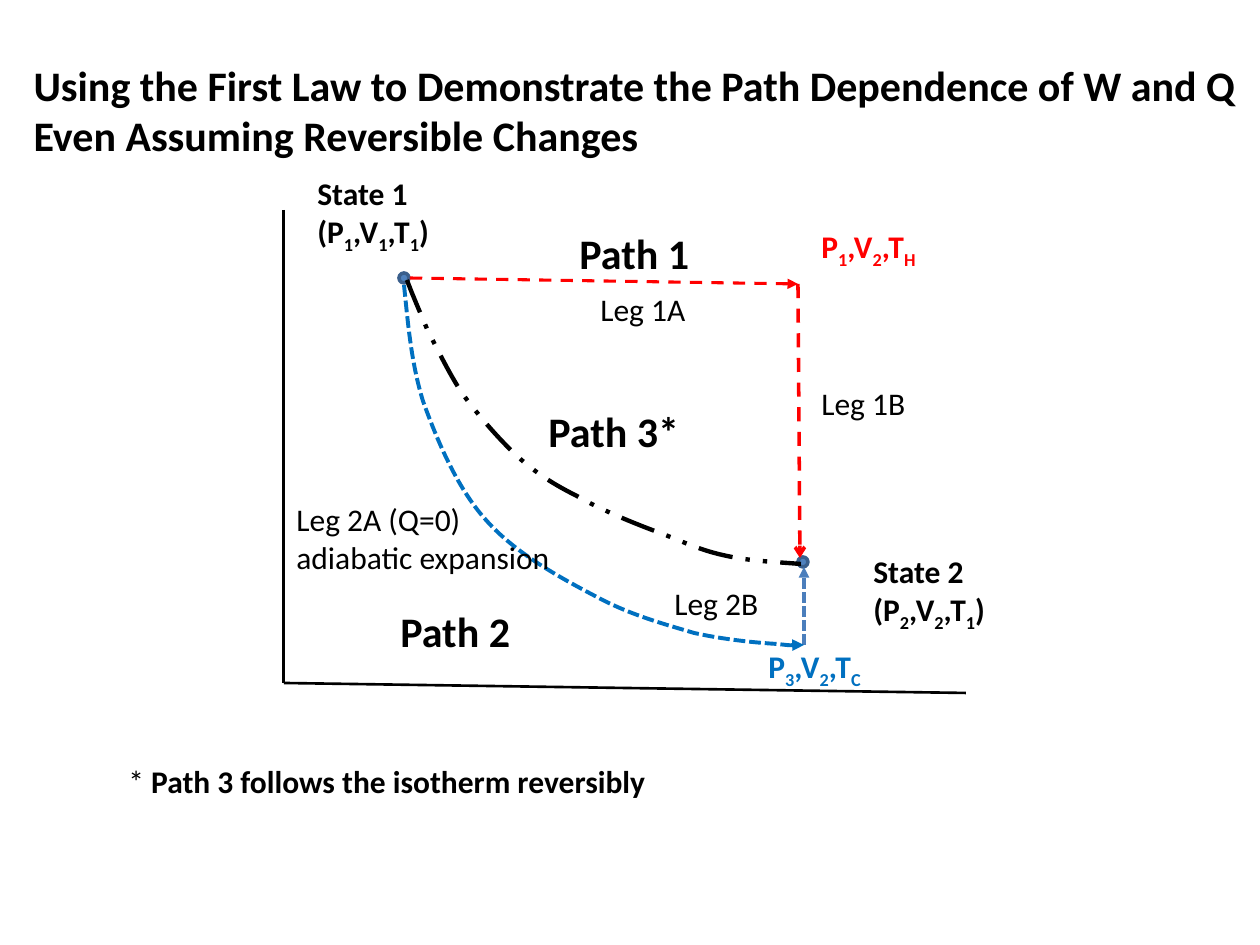
from lxml import etree
from pptx import Presentation
from pptx.dml.color import RGBColor
from pptx.enum.dml import MSO_LINE
from pptx.enum.shapes import MSO_CONNECTOR, MSO_SHAPE
from pptx.enum.text import MSO_ANCHOR, MSO_AUTO_SIZE, PP_ALIGN
from pptx.oxml.ns import qn
from pptx.util import Pt

PX = 914400 // 126  # EMU in one px
STRAIGHT, OVAL = MSO_CONNECTOR.STRAIGHT, MSO_SHAPE.OVAL
DASH, SHORT_DASH = MSO_LINE.DASH, MSO_LINE.SQUARE_DOT
DASH_DOT_DOT = MSO_LINE.DASH_DOT_DOT
TOP, LEFT, FIXED = MSO_ANCHOR.TOP, PP_ALIGN.LEFT, MSO_AUTO_SIZE.NONE

THEME = {
    "font": "Calibri", "heading": 24, "label": 18,
    "ink": "000000", "hot": "FF0000", "cold": "0070C0",
    "leg_2b": "4B7EBC", "state": "4F81BD", "state_edge": "3A5F8C",
}


def write(paragraph, text, size="label", bold=False, colour="ink"):
    """Add runs to a paragraph; the character after each "_" is a subscript."""
    first, *rest = text.split("_")
    pieces = [(first, False)]
    for piece in rest:
        pieces += [(piece[0], True), (piece[1:], False)]
    for words, subscript in pieces:
        if not words:
            continue
        run = paragraph.add_run()
        run.text = words
        formats = {"name": THEME["font"], "size": Pt(THEME[size]), "bold": bold}
        for key, value in formats.items():
            setattr(run.font, key, value)
        run.font.color.rgb = RGBColor.from_string(THEME[colour])
        if subscript:
            run.font._element.set("baseline", "-25000")


def stroke(item, colour, width, dash=None, arrow=None):
    """Format a line, give it an optional end arrow and no shadow."""
    item.line.color.rgb = RGBColor.from_string(THEME[colour])
    item.line.width = Pt(width)
    if dash:
        item.line.dash_style = dash
    properties = item._element.spPr
    if arrow:
        etree.SubElement(properties.find(qn("a:ln")), qn("a:tailEnd"), type=arrow)
    etree.SubElement(properties, qn("a:effectLst"))


prs = Presentation()
prs.slide_width, prs.slide_height = 1260 * PX, 945 * PX
slide = prs.slides.add_slide(prs.slide_layouts[5])
shapes = slide.shapes

# Title
title = shapes.title
place = {"left": 21, "top": 53, "width": 1239, "height": 115}
for key, value in place.items():
    setattr(title, key, value * PX)
frame_format = {"word_wrap": True, "auto_size": FIXED, "vertical_anchor": TOP}
for key, value in frame_format.items():
    setattr(title.text_frame, key, value)
title_lines = ["Using the First Law to Demonstrate the Path Dependence of W and Q",
               "Even Assuming Reversible Changes"]
for i, line in enumerate(title_lines):
    paragraph = title.text_frame.add_paragraph() if i else title.text_frame.paragraphs[0]
    paragraph.alignment = LEFT
    write(paragraph, line, "heading", True)

# State points
for x, y in [(399, 273), (798, 557)]:
    state = shapes.add_shape(OVAL, x * PX, y * PX, 10 * PX, 10 * PX)
    state.fill.solid()
    state.fill.fore_color.rgb = RGBColor.from_string(THEME["state"])
    stroke(state, "state_edge", 2)

# Axes and straight legs
straight_lines = [
    ((284, 210), (284, 683), "ink", 1.75, None, None),
    ((284, 683), (966, 693), "ink", 1.5, None, None),
    ((410, 278), (798, 284), "hot", 1.75, DASH, "triangle"),
    ((798, 284), (800, 558), "hot", 2, DASH, "arrow"),
    ((804, 645), (804, 567), "leg_2b", 2, SHORT_DASH, "triangle"),
]
for start, end, *look in straight_lines:
    leg = shapes.add_connector(STRAIGHT, *(v * PX for v in start + end))
    stroke(leg, *look)

# Expansion curves: a start point, then three Bezier points per segment
adiabat = [
    (404, 285), (408, 323), (411, 362), (423, 401), (437, 440), (457, 488), (486, 520),
    (515, 553), (559, 577), (595, 596), (630, 615), (664, 624), (694, 633),
    (726, 640), (759, 643), (777, 644), (795, 646), (804, 645), (804, 645),
]
isotherm = [
    (407, 280), (413, 296), (420, 312), (428, 331), (438, 350), (449, 373), (462, 393),
    (478, 415), (498, 438), (517, 456), (536, 473), (553, 484), (577, 496),
    (601, 510), (638, 525), (663, 534), (688, 544), (703, 551), (727, 556),
    (750, 561), (775, 562), (801, 564),
]
curves = [
    (adiabat, "cold", 2.25, SHORT_DASH, "triangle"),
    (isotherm, "ink", 2.5, DASH_DOT_DOT, None),
]
for points, *look in curves:
    builder = shapes.build_freeform(*points[0], scale=PX)
    builder.add_line_segments(points[1:], close=False)
    curve = builder.convert_to_shape()
    curve.fill.background()
    stroke(curve, *look)
    # Turn every three straight steps into one cubic segment
    steps = list(curve._element.iter(qn("a:lnTo")))
    outline = steps[0].getparent()
    for i in range(0, len(steps), 3):
        cubic = etree.SubElement(outline, qn("a:cubicBezTo"))
        for step in steps[i:i + 3]:
            cubic.append(step[0])
            outline.remove(step)

# Labels: lines, place, size, bold, colour
labels = [
    (["State 1", "(P_1,V_1,T_1)"], (305, 168, 199, 89), "label", True, "ink"),
    (["State 2 (P_2,V_2,T_1)"], (861, 546, 147, 89), "label", True, "ink"),
    (["P_1,V_2,T_H"], (809, 221, 158, 50), "label", True, "hot"),
    (["P_3,V_2,T_C"], (756, 641, 158, 50), "label", True, "cold"),
    (["Path 1"], (567, 221, 147, 63), "heading", True, "ink"),
    (["Path 2"], (388, 599, 179, 115), "heading", True, "ink"),
    (["Path 3*"], (536, 399, 210, 115), "heading", True, "ink"),
    (["Leg 1A"], (588, 284, 116, 50), "label", False, "ink"),
    (["Leg 1B"], (809, 378, 116, 50), "label", False, "ink"),
    (["Leg 2A (Q=0)", "adiabatic expansion"], (284, 494, 284, 89), "label", False, "ink"),
    (["Leg 2B"], (662, 578, 116, 50), "label", False, "ink"),
    (["* "], (116, 756, 557, 50), "label", False, "ink"),
]
for lines, box, *look in labels:
    label = shapes.add_textbox(*(v * PX for v in box)).text_frame
    label.word_wrap = True
    for i, line in enumerate(lines):
        paragraph = label.add_paragraph() if i else label.paragraphs[0]
        write(paragraph, line, *look)

# The footnote goes on in bold after its asterisk
write(paragraph, "Path 3 follows the isotherm reversibly", bold=True)

prs.save("out.pptx")
